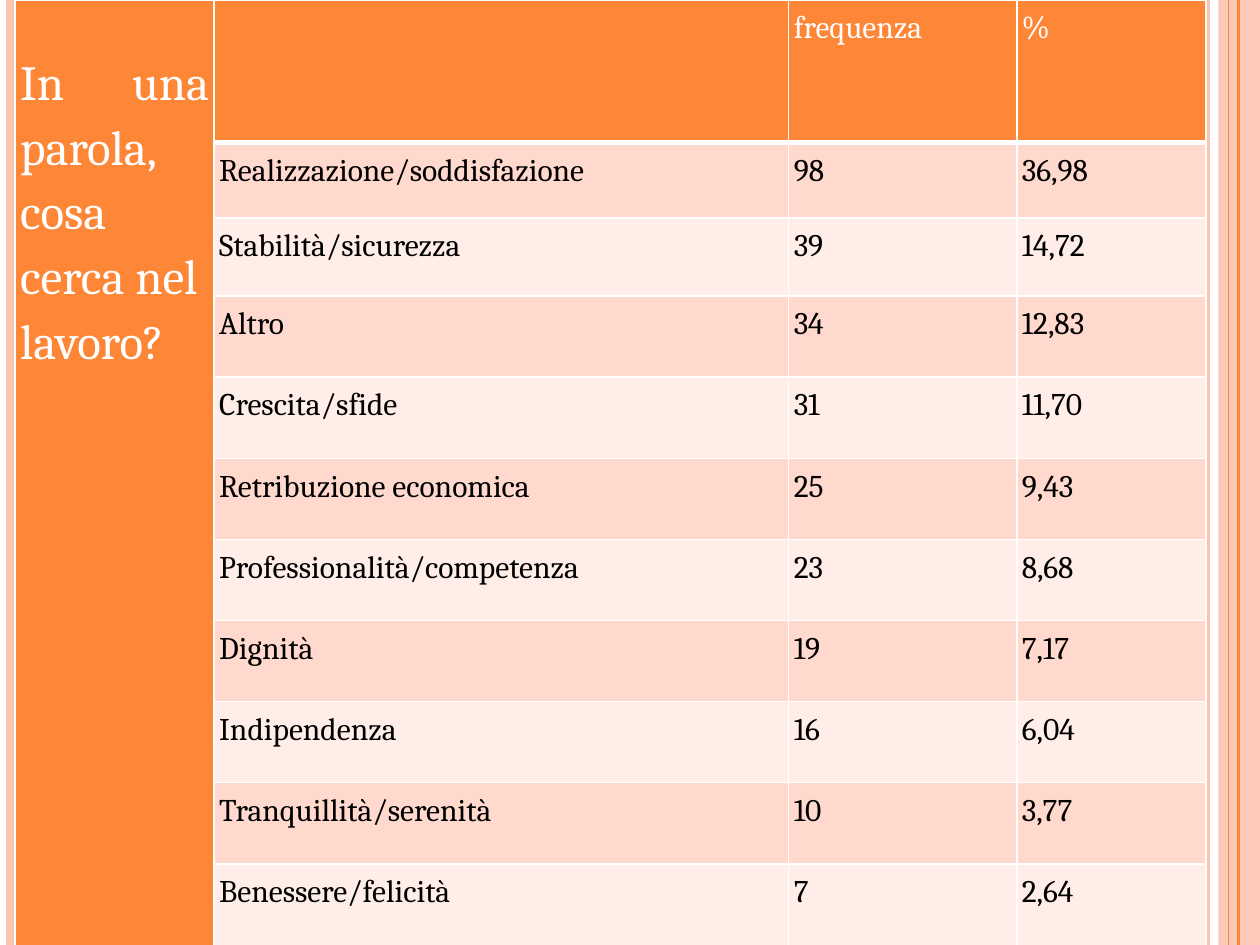
from lxml import etree
from pptx import Presentation
from pptx.dml.color import RGBColor
from pptx.enum.shapes import MSO_CONNECTOR, MSO_SHAPE
from pptx.enum.text import PP_ALIGN
from pptx.oxml.ns import qn
from pptx.util import Inches, Pt

STRAIGHT = MSO_CONNECTOR.STRAIGHT
RECTANGLE = MSO_SHAPE.RECTANGLE
JUSTIFY = PP_ALIGN.JUSTIFY
ORANGE, PEACH, WHITE, BLACK = "FE8637", "FEC3AE", "FFFFFF", "000000"
BANDS = ["FFD9CE", "FFEDE8"]
W, H = 10, 7.5


def rgb(value):
    return RGBColor.from_string(value)


def format_cell(cell, lines, fill, color, size=18, bottom=1):
    """Write the lines as paragraphs, then set white borders and the fill."""
    cell.margin_left = cell.margin_right = Inches(0.04)
    cell.margin_top = cell.margin_bottom = Inches(0.04)
    tf = cell.text_frame
    for i, line in enumerate(lines):
        p = tf.add_paragraph() if i else tf.paragraphs[0]
        p.alignment = JUSTIFY
        p.line_spacing = 1.15
        r = p.add_run()
        r.text = line
        r.font.name = "Cambria"
        r.font.size = Pt(size)
        r.font.color.rgb = rgb(color)
    tc_pr = cell._tc.get_or_add_tcPr()
    for side, width in [("L", 1), ("R", 1), ("T", 1), ("B", bottom)]:
        ln = etree.SubElement(tc_pr, qn(f"a:ln{side}"), w=str(Pt(width)))
        solid = etree.SubElement(ln, qn("a:solidFill"))
        etree.SubElement(solid, qn("a:srgbClr"), val=WHITE)
    cell.fill.solid()
    cell.fill.fore_color.rgb = rgb(fill)


prs = Presentation()
prs.slide_width, prs.slide_height = Inches(W), Inches(H)
s = prs.slides.add_slide(prs.slide_layouts[6])

# Side decoration: a translucent strip and vertical rules
strip = s.shapes.add_shape(RECTANGLE, Inches(9.67), 0, Inches(0.33), Inches(H))
strip.shadow.inherit = False
strip.fill.solid()
strip.fill.fore_color.rgb = rgb(PEACH)
strip.line.fill.background()
strip_color = strip.fill._xPr.find(qn("a:solidFill"))[0]
etree.SubElement(strip_color, qn("a:alpha"), val="87000")

for x, color, width in [(9.58, PEACH, 3), (0.08, PEACH, 4.5),
                        (9.83, ORANGE, 1.5), (9.75, ORANGE, 0.75)]:
    rule = s.shapes.add_connector(STRAIGHT, Inches(x), 0, Inches(x), Inches(H))
    rule.line.color.rgb = rgb(color)
    rule.line.width = Pt(width)
    etree.SubElement(rule._element.spPr, qn("a:effectLst"))

# Frequency table
answers = [
    ("Realizzazione/soddisfazione", "98", "36,98"),
    ("Stabilità/sicurezza", "39", "14,72"),
    ("Altro", "34", "12,83"),
    ("Crescita/sfide", "31", "11,70"),
    ("Retribuzione economica", "25", "9,43"),
    ("Professionalità/competenza", "23", "8,68"),
    ("Dignità", "19", "7,17"),
    ("Indipendenza", "16", "6,04"),
    ("Tranquillità/serenità", "10", "3,77"),
    ("Benessere/felicità", "7", "2,64"),
]
col_widths = [1.58, 4.56, 1.81, 1.5]
top_rows = [1.13, 0.6, 0.62]
equal_rows = len(answers) + 1 - len(top_rows)
row_heights = top_rows + [(H - sum(top_rows)) / equal_rows] * equal_rows

table = s.shapes.add_table(len(row_heights), len(col_widths), Inches(0.12), 0,
                           Inches(sum(col_widths)), Inches(H)).table
table.first_row = table.horz_banding = False
for column, width in zip(table.columns, col_widths):
    column.width = Inches(width)
for row, height in zip(table.rows, row_heights):
    row.height = Inches(height)

question = table.cell(0, 0)
question.merge(table.cell(len(answers), 0))
format_cell(question, ["In una parola,", "cosa cerca nel", "lavoro?"],
            ORANGE, WHITE, size=28, bottom=3)
question.margin_top = Inches(0.38)

for col, lines in enumerate([[], ["frequenza"], ["%"]], start=1):
    format_cell(table.cell(0, col), lines, ORANGE, WHITE, bottom=3)
for row, answer in enumerate(answers, start=1):
    for col, text in enumerate(answer, start=1):
        format_cell(table.cell(row, col), [text], BANDS[(row - 1) % 2], BLACK)

prs.save("out.pptx")
